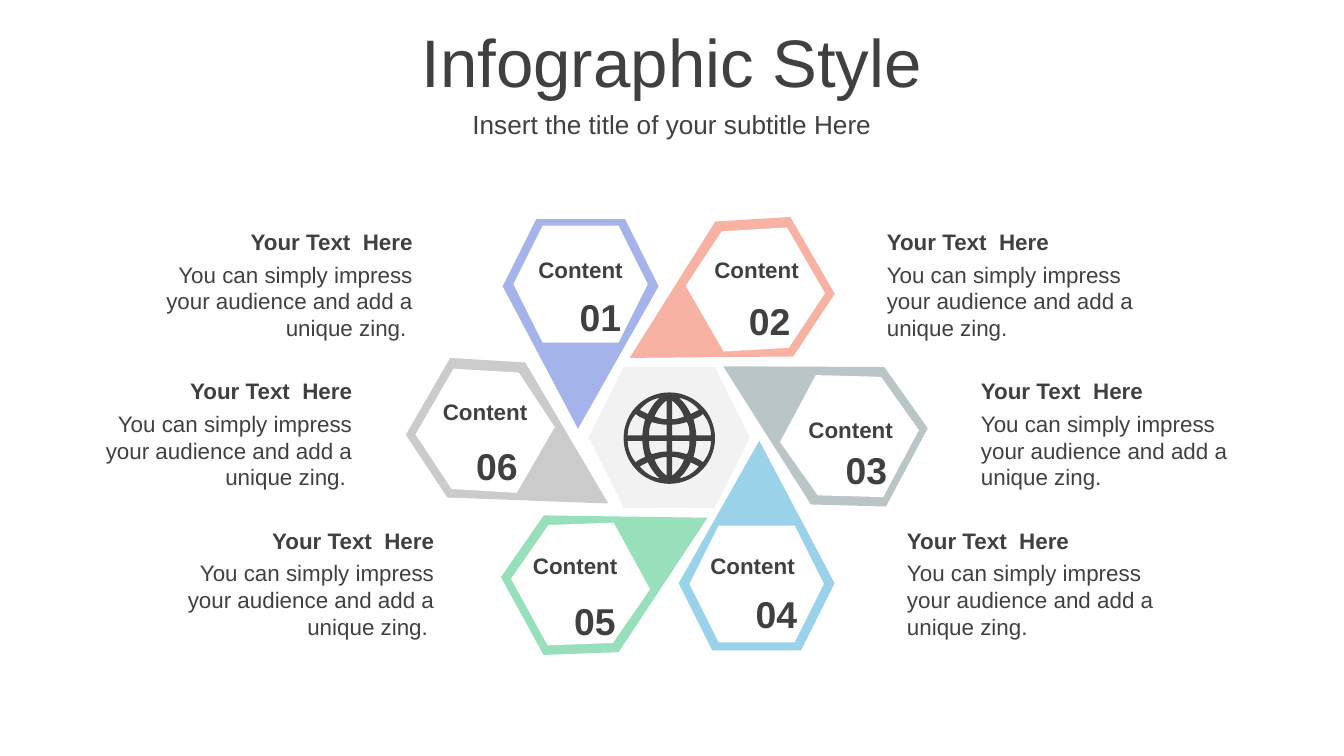
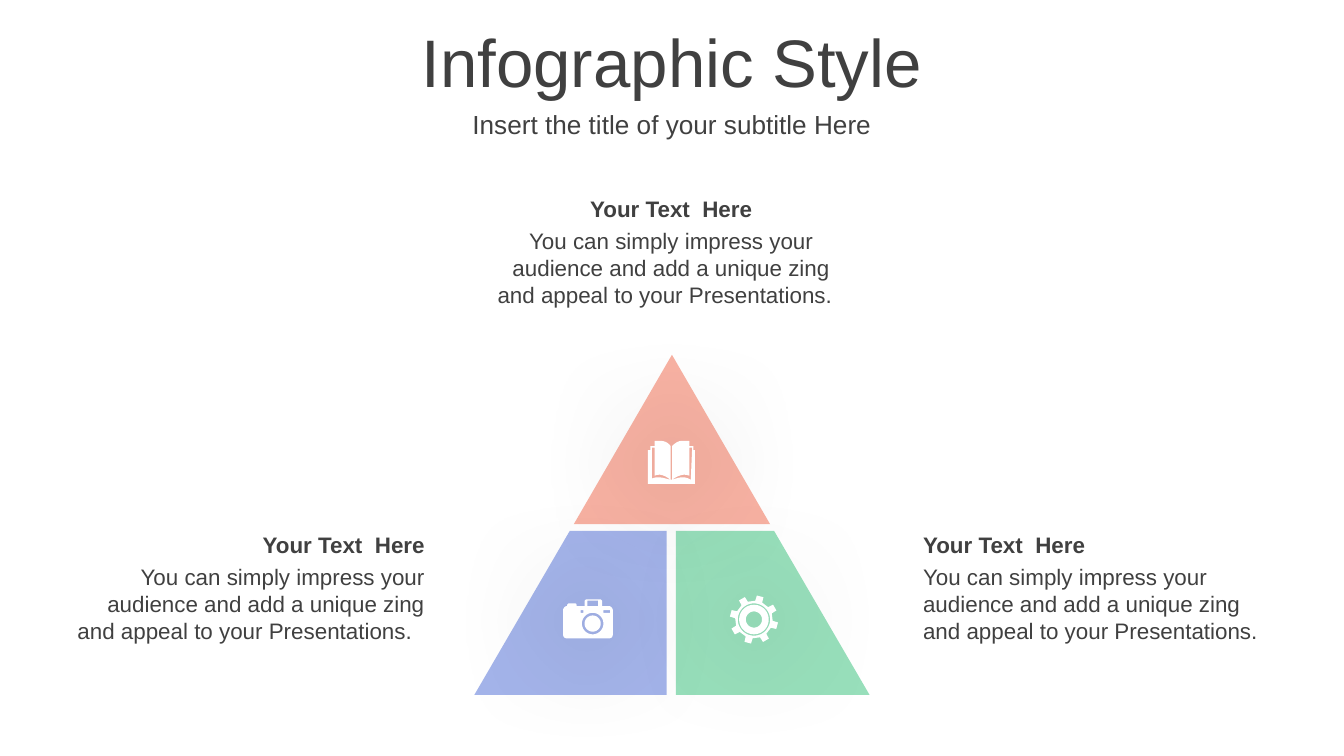
from math import cos, sin, radians
from lxml import etree
from pptx import Presentation
from pptx.dml.color import RGBColor
from pptx.enum.shapes import MSO_SHAPE
from pptx.enum.text import MSO_ANCHOR, PP_ALIGN
from pptx.oxml.ns import qn
from pptx.util import Inches, Pt

HEXAGON = MSO_SHAPE.HEXAGON
TOP, MIDDLE = MSO_ANCHOR.TOP, MSO_ANCHOR.MIDDLE
LEFT, CENTER, RIGHT = PP_ALIGN.LEFT, PP_ALIGN.CENTER, PP_ALIGN.RIGHT
FONT = "Arial"
COLORS = {
    "ink": "404040", "white": "FFFFFF", "core": "F2F2F2",
    "blue": "A4B4EA", "coral": "F8B2A3", "slate": "BAC5C5",
    "sky": "9AD3E9", "green": "98DFBB", "gray": "CBCBCB",
}
HEADING = "Your Text  Here"
CURVE_STEPS = 6


def write(slide, text, left, top, width, height, size=12, bold=False,
          align=LEFT, anchor=TOP, wrap=True):
    box = slide.shapes.add_textbox(Inches(left), Inches(top), Inches(width), Inches(height))
    frame = box.text_frame
    frame.word_wrap = wrap
    frame.vertical_anchor = anchor
    paragraph = frame.paragraphs[0]
    paragraph.alignment = align
    run = paragraph.add_run()
    run.text = text
    run.font.name = FONT
    run.font.size = Pt(size)
    run.font.bold = bold
    run.font.color.rgb = RGBColor.from_string(COLORS["ink"])


def draw(slide, contours, color, glow=False):
    builder = None
    for contour in contours:
        points = [contour[0]]
        for step in contour[1:]:
            if len(step) == 2:
                points.append(step)
                continue
            x0, y0 = points[-1]
            x1, y1, x2, y2, x3, y3 = step
            for i in range(1, CURVE_STEPS + 1):
                t = i / CURVE_STEPS
                a, b, c, d = (1 - t) ** 3, 3 * t * (1 - t) ** 2, 3 * t * t * (1 - t), t ** 3
                points.append((a * x0 + b * x1 + c * x2 + d * x3,
                               a * y0 + b * y1 + c * y2 + d * y3))
        points = [(Inches(x), Inches(y)) for x, y in points]
        if builder is None:
            builder = slide.shapes.build_freeform(*points[0], scale=1.0)
        else:
            builder.move_to(*points[0])
        builder.add_line_segments(points[1:], close=True)
    shape = builder.convert_to_shape()
    shape.fill.solid()
    shape.fill.fore_color.rgb = RGBColor.from_string(COLORS[color])
    shape.line.fill.background()
    shape.shadow.inherit = False
    if glow:
        effects = shape._element.spPr.find(qn("a:effectLst"))
        shadow = etree.SubElement(effects, qn("a:outerShdw"), blurRad=str(Pt(63)),
                                  dist="0", dir="0", algn="ctr", rotWithShape="0")
        black = etree.SubElement(shadow, qn("a:srgbClr"), val="000000")
        etree.SubElement(black, qn("a:alpha"), val="40000")
    return shape


prs = Presentation()
prs.slide_width = Inches(10)
prs.slide_height = Inches(10 * 9 / 16)
wheel, pyramid = [prs.slides.add_slide(prs.slide_layouts[6]) for _ in range(2)]
for slide in (wheel, pyramid):
    write(slide, "Infographic Style", 0, 0.14, 10, 0.63, size=36, align=CENTER, anchor=MIDDLE)
    write(slide, "Insert the title of your subtitle Here", 0, 0.77, 10, 0.31,
          size=14, align=CENTER, anchor=MIDDLE)

unit_circle = [(cos(radians(a)), sin(radians(a))) for a in range(0, 360, 6)]

petal = [(0.91, 1.56), (0.25, 1.56), (0, 1.06), (0.6, 0), (1.16, 1.06)]
steps = [
    ("blue", 180, (3.74, 1.63), (3.82, 1.68), (4.21, 2.14), (3.79, 1.86)),
    ("coral", 240, (4.79, 1.51), (5.12, 1.72), (5.47, 2.17), (5.1, 1.86)),
    ("slate", 298.1, (5.48, 2.33), (5.82, 2.81), (6.19, 3.28), (5.8, 3.05)),
    ("sky", 0, (5.05, 3.28), (5.13, 3.91), (5.52, 4.35), (5.07, 4.06)),
    ("green", 61.3, (3.99, 3.43), (3.82, 3.91), (4.17, 4.4), (3.75, 4.06)),
    ("gray", 120, (3.28, 2.56), (3.11, 2.77), (3.44, 3.25), (3.08, 2.91)),
]
hexagons = [("core", 0, (4.38, 2.73), (1.2, 1.05))]
for color, turn, (left, top), window, number_at, label_at in steps:
    leaf = draw(wheel, [petal], color)
    leaf.left, leaf.top = Inches(left), Inches(top)
    leaf.rotation = turn
    hexagons.append(("white", (turn + 180) % 360, window, (1, 0.87)))
for color, turn, (left, top), (width, height) in hexagons:
    cell = wheel.shapes.add_shape(HEXAGON, Inches(left), Inches(top), Inches(width), Inches(height))
    cell.rotation = turn
    cell.fill.solid()
    cell.fill.fore_color.rgb = RGBColor.from_string(COLORS[color])
    cell.line.fill.background()
    cell.shadow.inherit = False

globe_x, globe_y = 4.98, 3.26
globe_quarter = [
    [(0.07, 0.3), (0.11, 0.27, 0.14, 0.22, 0.16, 0.18),
     (0.18, 0.19, 0.2, 0.2, 0.22, 0.21), (0.18, 0.26, 0.13, 0.29, 0.07, 0.3)],
    [(0.02, 0.28), (0.02, 0.14), (0.05, 0.14, 0.08, 0.15, 0.11, 0.16),
     (0.09, 0.21, 0.06, 0.25, 0.02, 0.28)],
    [(0.13, 0.12), (0.1, 0.11, 0.06, 0.1, 0.02, 0.1), (0.02, 0.02), (0.15, 0.02),
     (0.15, 0.05, 0.15, 0.09, 0.13, 0.12)],
    [(0.25, 0.18), (0.23, 0.16, 0.2, 0.15, 0.18, 0.14),
     (0.19, 0.1, 0.2, 0.06, 0.2, 0.02), (0.31, 0.02), (0.31, 0.08, 0.29, 0.13, 0.25, 0.18)],
]
globe = [[(globe_x + 0.34 * x, globe_y + 0.34 * y) for x, y in unit_circle]]
for side_x, side_y in ((1, 1), (1, -1), (-1, 1), (-1, -1)):
    for pane in globe_quarter:
        globe.append([tuple(globe_y + side_y * v if i % 2 else globe_x + side_x * v
                            for i, v in enumerate(step)) for step in pane])
draw(wheel, globe, "ink")

for number, (color, turn, leaf_at, window, number_at, label_at) in enumerate(steps, 1):
    write(wheel, f"{number:02d}", *number_at, 0.51, 0.44, size=20, bold=True,
          align=RIGHT, wrap=False)
    write(wheel, "Content", *label_at, 1.06, 0.3, bold=True, align=CENTER)

draw(pyramid, [[(5, 2.64), (5.73, 3.9), (4.27, 3.9)]], "coral")
draw(pyramid, [[(5.03, 3.95), (5.76, 3.95), (6.47, 5.17), (5.03, 5.17)]], "green")
draw(pyramid, [[(4.24, 3.95), (4.96, 3.95), (4.96, 5.17), (3.53, 5.17)]], "blue")

book = [[
    (4.99, 3.57), (5, 3.57), (5.06, 3.55, 5.09, 3.54, 5.14, 3.57), (5.15, 3.33), (5.13, 3.33),
    (5.13, 3.54), (5.09, 3.52, 5.04, 3.54, 5, 3.57), (5, 3.32),
    (5.03, 3.29, 5.05, 3.28, 5.08, 3.28), (5.13, 3.28), (5.13, 3.32), (5.16, 3.32),
    (5.16, 3.35), (5.17, 3.35), (5.17, 3.6), (4.82, 3.6), (4.82, 3.35), (4.84, 3.35),
    (4.84, 3.32), (4.87, 3.32), (4.87, 3.28), (4.91, 3.28),
    (4.94, 3.28, 4.97, 3.29, 4.99, 3.32), (4.99, 3.57), (4.95, 3.54, 4.91, 3.52, 4.87, 3.54),
    (4.87, 3.33), (4.85, 3.33), (4.85, 3.56), (4.91, 3.54, 4.94, 3.56, 4.99, 3.57),
]]
draw(pyramid, book, "white", glow=True)

gear_x, gear_y = 5.61, 4.61
teeth = [(radius, 45 * tooth - 75 + offset) for tooth in range(8)
         for radius, offset in ((0.14, -11), (0.18, -8), (0.18, 8), (0.14, 11))]
gear = [[(gear_x + r * cos(radians(a)), gear_y + r * sin(radians(a))) for r, a in teeth]]
for radius in (0.12, 0.11, 0.06):
    gear.append([(gear_x + radius * x, gear_y + radius * y) for x, y in unit_circle])
draw(pyramid, gear, "white", glow=True)

camera = [[
    (4.36, 4.46), (4.47, 4.46), (4.47, 4.46, 4.48, 4.47, 4.48, 4.47), (4.48, 4.51), (4.53, 4.51),
    (4.55, 4.51, 4.56, 4.53, 4.56, 4.54), (4.56, 4.72), (4.56, 4.74, 4.55, 4.75, 4.53, 4.75),
    (4.22, 4.75), (4.2, 4.75, 4.19, 4.74, 4.19, 4.72), (4.19, 4.54),
    (4.19, 4.53, 4.2, 4.51, 4.22, 4.51), (4.22, 4.5), (4.22, 4.5, 4.23, 4.49, 4.23, 4.49),
    (4.28, 4.49), (4.29, 4.49, 4.29, 4.5, 4.29, 4.5), (4.29, 4.51), (4.35, 4.51), (4.35, 4.47),
]]
for left, top, right, bottom in ((4.32, 4.54, 4.34, 4.56), (4.49, 4.54, 4.54, 4.56),
                                 (4.37, 4.47, 4.45, 4.51)):
    camera.append([(left, top), (right, top), (right, bottom), (left, bottom)])
for radius in (0.08, 0.06):
    camera.append([(4.41 + radius * x, 4.64 + radius * y) for x, y in unit_circle])
draw(pyramid, camera, "white", glow=True)

short_copy = "You can simply impress your audience and add a unique zing. "
long_copy = ("You can simply impress your audience and add a unique zing "
             "and appeal to your Presentations.  ")
captions = [
    (wheel, short_copy, 2.11, RIGHT, ((1.06, 1.65), (0.61, 2.76), (1.22, 3.87))),
    (wheel, short_copy, 2.11, LEFT, ((6.5, 1.65), (7.2, 2.76), (6.65, 3.87))),
    (pyramid, long_copy, 2.83, RIGHT, ((0.43, 3.9),)),
    (pyramid, long_copy, 2.83, LEFT, ((6.77, 3.9),)),
    (pyramid, long_copy, 2.83, CENTER, ((3.58, 1.4),)),
]
for slide, copy, width, align, places in captions:
    for left, top in places:
        write(slide, copy, left, top + 0.24, width, 0.71, align=align)
        write(slide, HEADING, left, top, width, 0.3, bold=True, align=align)

prs.save("out.pptx")
